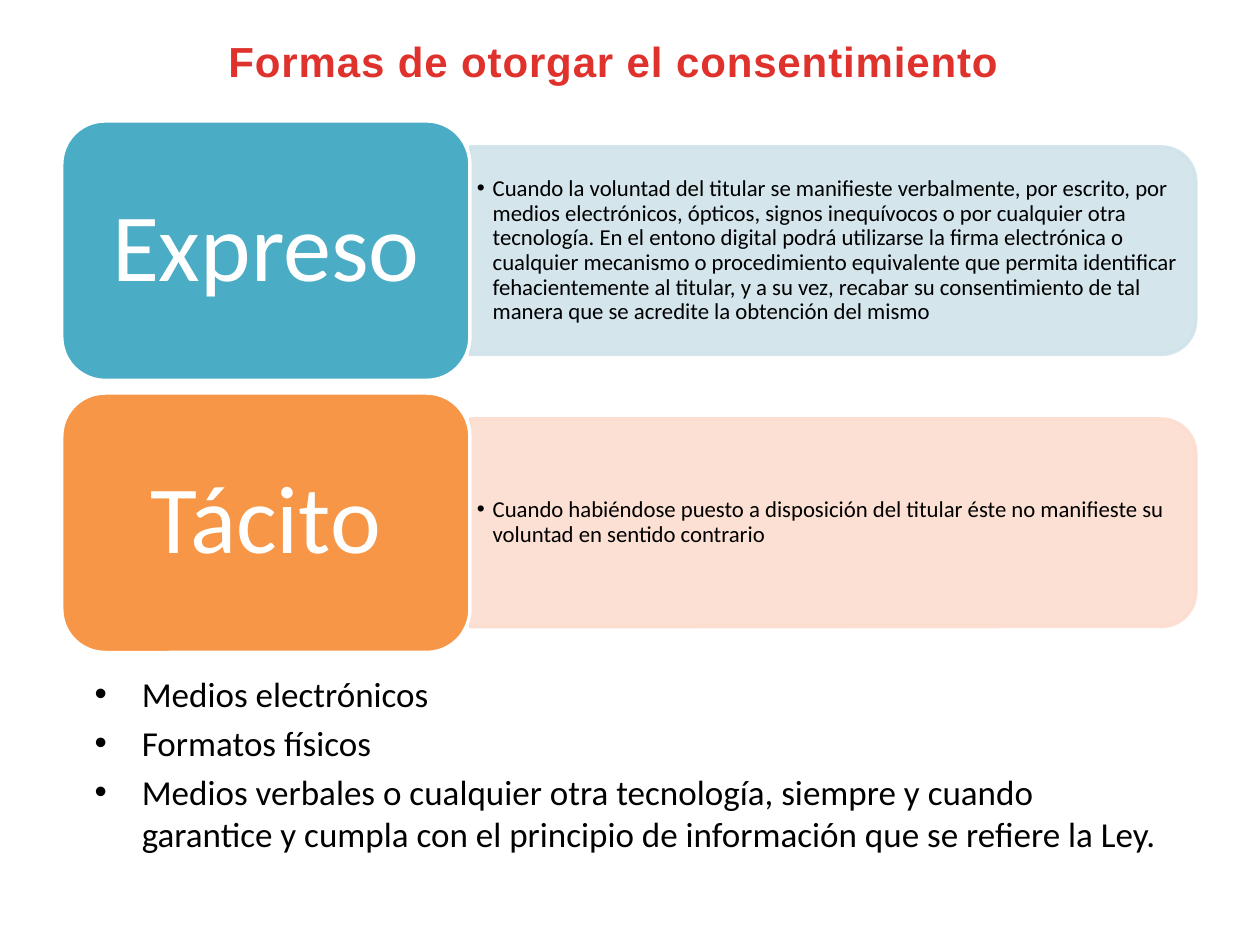
"""Build a slide on the two ways of giving consent."""
from pptx import Presentation
from pptx.dml.color import RGBColor
from pptx.enum.shapes import MSO_SHAPE
from pptx.enum.text import MSO_ANCHOR, MSO_AUTO_SIZE, PP_ALIGN
from pptx.oxml.ns import qn
from pptx.util import Pt
from lxml.etree import SubElement

COLORS = {
    "red": "E0322D", "dark red": "A2201C", "white": "FFFFFF", "black": "000000",
    "teal": "4BACC6", "pale teal": "D0E3EA",
    "orange": "F79646", "pale orange": "FCDDCF",
}
FORMS = [
    ("Expreso", "teal",
     "Cuando la voluntad del titular se manifieste verbalmente, por escrito, por medios "
     "electrónicos, ópticos, signos inequívocos o por cualquier otra tecnología. En el entono "
     "digital podrá utilizarse la firma electrónica o cualquier mecanismo o procedimiento "
     "equivalente que permita identificar fehacientemente al titular, y a su vez, recabar su "
     "consentimiento de tal manera que se acredite la obtención del mismo"),
    ("Tácito", "orange",
     "Cuando habiéndose puesto a disposición del titular éste no manifieste su voluntad en "
     "sentido contrario"),
]
MEANS = [
    "Medios electrónicos",
    "Formatos físicos",
    "Medios verbales o cualquier otra tecnología, siempre y cuando garantice y cumpla con el "
    "principio de información que se refiere la Ley.",
]
LEFT, TOP, PITCH = 35.3, 69.1, 155.5
LABEL_WIDTH, LABEL_HEIGHT = 233.3, 148.3
PANEL_WIDTH, PANEL_HEIGHT = 414.7, 118.6
DETAIL_WIDTH, DETAIL_HEIGHT = 409, 106.6


class ConsentSlide:
    """Hold the style and the current slide."""

    def __init__(self, slide, font="Calibri"):
        self.slide = slide
        self.font = font

    def color(self, name):
        return RGBColor.from_string(COLORS[name])

    def place(self, shape, left, top, width, height):
        shape.left, shape.top = Pt(left), Pt(top)
        shape.width, shape.height = Pt(width), Pt(height)

    def set_text(self, paragraph, text, size, color="black"):
        paragraph.text = text
        paragraph.font.name = self.font
        paragraph.font.size = Pt(size)
        paragraph.font.color.rgb = self.color(color)

    def bullet(self, paragraph, indent):
        properties = paragraph._p.get_or_add_pPr()
        properties.set("marL", str(Pt(indent)))
        properties.set("indent", str(-Pt(indent)))
        marker = properties.find(qn("a:defRPr"))
        face = properties.makeelement(qn("a:buFont"), {"typeface": "Arial"})
        char = properties.makeelement(qn("a:buChar"), {"char": "•"})
        marker.addprevious(face)
        marker.addprevious(char)

    def title(self, text, left, top, width, height):
        title = self.slide.shapes.title
        self.place(title, left, top, width, height)
        frame = title.text_frame
        frame.vertical_anchor = MSO_ANCHOR.MIDDLE
        heading = frame.paragraphs[0]
        heading.text = text
        heading.alignment = PP_ALIGN.CENTER
        font = heading.font
        font.name, font.size, font.bold = "Arial", Pt(24), True
        font.fill.gradient()
        font.fill.gradient_angle = 270
        shades = (("red", 0.25), ("dark red", 1))
        for stop, (shade, position) in zip(font.fill.gradient_stops, shades):
            stop.color.rgb = self.color(shade)
            stop.position = position
        font._element.set("spc", "50")

    def block(self, preset, left, top, width, height, fill, line):
        block = self.slide.shapes.add_shape(preset, Pt(left), Pt(top), Pt(width), Pt(height))
        block.shadow.inherit = False
        block.fill.solid()
        block.fill.fore_color.rgb = self.color(fill)
        block.line.color.rgb = self.color(line)
        block.line.width = Pt(2)
        return block

    def panel(self, left, middle, fill):
        panel = self.block(MSO_SHAPE.ROUND_2_SAME_RECTANGLE,
                           left + (PANEL_WIDTH - PANEL_HEIGHT) / 2, middle - PANEL_WIDTH / 2,
                           PANEL_HEIGHT, PANEL_WIDTH, fill, fill)
        panel.rotation = 90
        for tone in panel._element.spPr.iter(qn("a:srgbClr")):
            SubElement(tone, qn("a:alpha"), val="90000")

    def detail(self, text, left, middle):
        box = self.slide.shapes.add_textbox(Pt(left), Pt(middle - DETAIL_HEIGHT / 2),
                                            Pt(DETAIL_WIDTH), Pt(DETAIL_HEIGHT))
        frame = box.text_frame
        frame.word_wrap = True
        frame.vertical_anchor = MSO_ANCHOR.MIDDLE
        frame.margin_left = frame.margin_right = Pt(3.9)
        frame.margin_top = frame.margin_bottom = Pt(1.95)
        paragraph = frame.paragraphs[0]
        self.set_text(paragraph, text, 13)
        paragraph.line_spacing = 0.9
        self.bullet(paragraph, 9)

    def label(self, text, left, top, fill):
        label = self.block(MSO_SHAPE.ROUNDED_RECTANGLE, left, top,
                           LABEL_WIDTH, LABEL_HEIGHT, fill, "white")
        frame = label.text_frame
        frame.vertical_anchor = MSO_ANCHOR.MIDDLE
        paragraph = frame.paragraphs[0]
        self.set_text(paragraph, text, 55, "white")
        paragraph.alignment = PP_ALIGN.CENTER
        paragraph.line_spacing = 0.9

    def bullets(self, items, left, top, width, height):
        body = self.slide.placeholders[1]
        self.place(body, left, top, width, height)
        frame = body.text_frame
        frame.auto_size = MSO_AUTO_SIZE.NONE
        for number, item in enumerate(items):
            paragraph = frame.add_paragraph() if number else frame.paragraphs[0]
            self.set_text(paragraph, item, 20)
            paragraph.space_before = Pt(4)
            self.bullet(paragraph, 27)


def main():
    deck = Presentation()
    deck.slide_width, deck.slide_height = Pt(720), Pt(540)
    page = ConsentSlide(deck.slides.add_slide(deck.slide_layouts[1]))
    page.title("Formas de otorgar el consentimiento", 26.6, 9.4, 648, 50.4)
    for row, (name, tone, explanation) in enumerate(FORMS):
        top = TOP + row * PITCH
        middle = top + LABEL_HEIGHT / 2
        page.panel(LEFT + LABEL_WIDTH, middle, f"pale {tone}")
        page.detail(explanation, LEFT + LABEL_WIDTH, middle)
        page.label(name, LEFT, top, tone)
    page.bullets(MEANS, 46.8, 380.9, 624.2, 119.5)
    deck.save("out.pptx")


if __name__ == "__main__":
    main()
